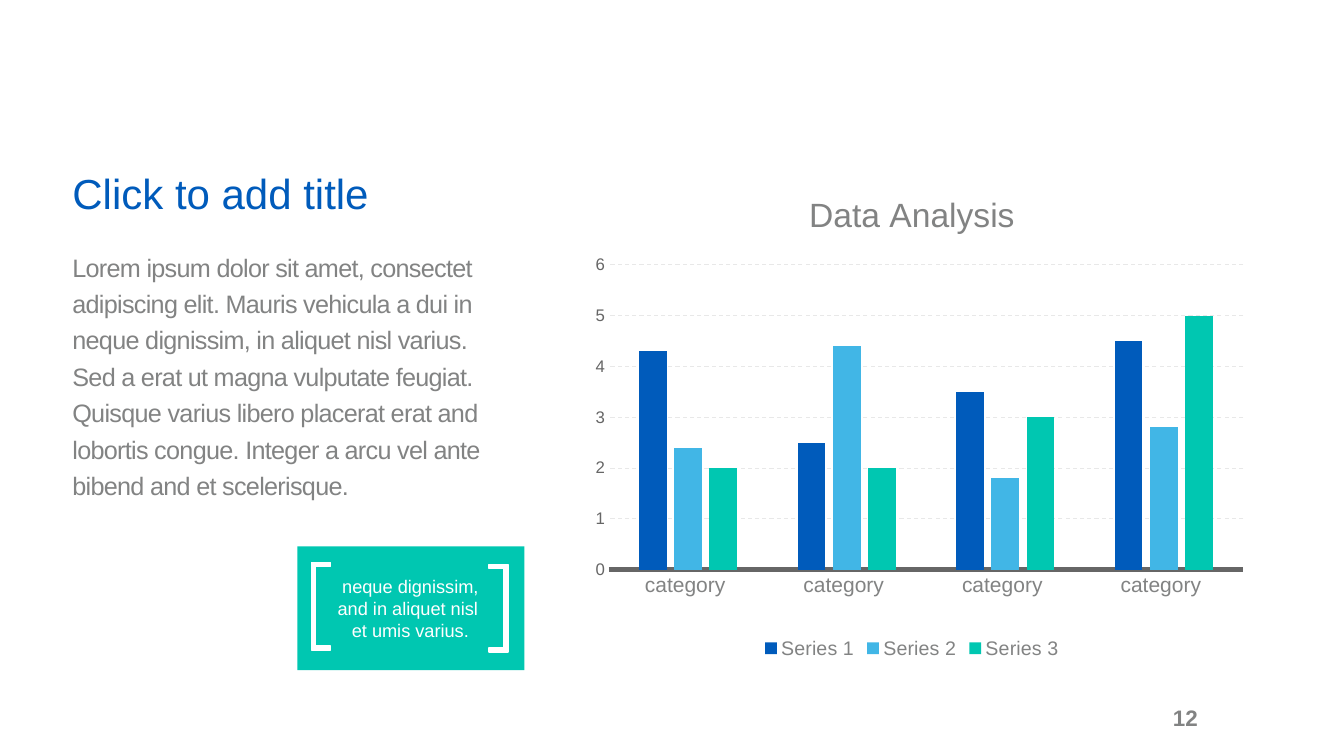
from lxml import etree
from pptx import Presentation
from pptx.chart.data import CategoryChartData
from pptx.dml.color import RGBColor
from pptx.enum.chart import XL_CHART_TYPE, XL_LEGEND_POSITION, XL_TICK_MARK
from pptx.enum.dml import MSO_LINE
from pptx.enum.shapes import MSO_SHAPE
from pptx.enum.text import MSO_ANCHOR, PP_ALIGN
from pptx.oxml.ns import qn
from pptx.util import Inches, Pt

TOP, MIDDLE, BOTTOM = MSO_ANCHOR.TOP, MSO_ANCHOR.MIDDLE, MSO_ANCHOR.BOTTOM
LEFT, CENTER, RIGHT = PP_ALIGN.LEFT, PP_ALIGN.CENTER, PP_ALIGN.RIGHT
NO_TICKS = XL_TICK_MARK.NONE

BLUE = RGBColor(0x00, 0x5B, 0xBB)
SKY = RGBColor(0x41, 0xB6, 0xE6)
TEAL = RGBColor(0x00, 0xC7, 0xB1)
GRAY = RGBColor(0x82, 0x83, 0x83)
DARK_GRAY = RGBColor(0x66, 0x66, 0x66)
PALE_GRAY = RGBColor(0xE8, 0xE8, 0xE8)
WHITE = RGBColor(0xFF, 0xFF, 0xFF)
FONT = "Arial"

TITLE = "Click to add title"
BODY = (
    "Lorem ipsum dolor sit amet, consectet adipiscing elit. Mauris vehicula "
    "a dui in neque dignissim, in aliquet nisl varius. Sed a erat ut magna "
    "vulputate feugiat. Quisque varius libero placerat erat and lobortis "
    "congue. Integer a arcu vel ante bibend and et scelerisque."
)
QUOTE = "neque dignissim, and in aliquet nisl \vet umis varius."
PAGE_NUMBER = "12"
CHART_TITLE = "Data Analysis"
CATEGORIES = ["category "] * 4
SERIES = [
    ("Series 1", (4.3, 2.5, 3.5, 4.5), BLUE),
    ("Series 2", (2.4, 4.4, 1.8, 2.8), SKY),
    ("Series 3", (2, 2, 3, 5), TEAL),
]

# Left, top, width and height in percent of the slide
TITLE_AREA = (4.65, 19.2, 35.03, 10.4)
BODY_AREA = (4.65, 31.87, 32.86, 40.4)
CALLOUT_AREA = (22.13, 72.27, 16.88, 16.4)
QUOTE_AREA = (24.08, 75.47, 12.9, 10.13)
LEFT_BRACKET = (23.18, 74.4, 1.43, 11.6)
RIGHT_BRACKET = (36.38, 74.67, 1.43, 11.6)
CHART_AREA = (41.63, 22.67, 52.44, 65.07)
PAGE_NUMBER_AREA = (84.17, 91.07, 5.93, 7.73)
# Shares of the chart's size
PLOT_AREA = {"x": 0.07, "y": 0.19, "w": 0.9, "h": 0.62}
BRACKET_THICKNESS = Inches(0.04)

deck = Presentation()
deck.slide_width, deck.slide_height = Inches(13.33), Inches(7.5)
slide = deck.slides.add_slide(deck.slide_layouts[6])


def place(area):
    """Turn percentages of the slide into lengths."""
    sides = (deck.slide_width, deck.slide_height) * 2
    return [round(share * side / 100) for share, side in zip(area, sides)]


def style_font(font, size, color, bold=False):
    font.name, font.size, font.bold = FONT, Pt(size), bold
    font.color.rgb = color


def add_text(text, area, size, color, bold=False, align=LEFT, anchor=TOP,
             line_spacing=None, tracking=None, insets=(0.1, 0.05)):
    frame = slide.shapes.add_textbox(*place(area)).text_frame
    frame.word_wrap = True
    frame.vertical_anchor = anchor
    frame.margin_left = frame.margin_right = Inches(insets[0])
    frame.margin_top = frame.margin_bottom = Inches(insets[1])
    paragraph = frame.paragraphs[0]
    paragraph.text = text
    paragraph.alignment = align
    paragraph.line_spacing = line_spacing
    for run in paragraph.runs:
        style_font(run.font, size, color, bold)
        if tracking:
            run.font._element.set("spc", str(round(tracking * 100)))


def add_bracket(area, opens_right):
    left, top, width, height = place(area)
    spine, tip, inward = (left, left + width, 1) if opens_right else (left + width, left, -1)
    inner = spine + inward * BRACKET_THICKNESS
    bottom = top + height
    upper, lower = top + BRACKET_THICKNESS, bottom - BRACKET_THICKNESS
    outline = slide.shapes.build_freeform(tip, top)
    outline.add_line_segments([
        (spine, top), (spine, bottom), (tip, bottom), (tip, lower),
        (inner, lower), (inner, upper), (tip, upper),
    ])
    bracket = outline.convert_to_shape()
    bracket.shadow.inherit = False
    bracket.fill.solid()
    bracket.fill.fore_color.rgb = WHITE
    bracket.line.color.rgb = WHITE
    bracket.line.width = Pt(1)


def set_plot_area(chart):
    """Fix the inner plot area inside the chart."""
    plot_area = chart._chartSpace.find(".//" + qn("c:plotArea"))
    for old in plot_area.findall(qn("c:layout")):
        plot_area.remove(old)
    layout = etree.Element(qn("c:layout"))
    manual = etree.SubElement(layout, qn("c:manualLayout"))
    settings = {"layoutTarget": "inner", "xMode": "edge", "yMode": "edge", **PLOT_AREA}
    for tag, value in settings.items():
        etree.SubElement(manual, qn("c:" + tag)).set("val", str(value))
    plot_area.insert(0, layout)


def add_analysis_chart():
    data = CategoryChartData()
    data.categories = CATEGORIES
    for name, values, _ in SERIES:
        data.add_series(name, values)
    chart = slide.shapes.add_chart(
        XL_CHART_TYPE.COLUMN_CLUSTERED, *place(CHART_AREA), data).chart
    style_font(chart.font, 10, DARK_GRAY)

    chart.has_title = True
    heading = chart.chart_title.text_frame
    heading.text = CHART_TITLE
    style_font(heading.paragraphs[0].runs[0].font, 24, GRAY)
    chart.chart_title.include_in_layout = False

    chart.has_legend = True
    chart.legend.position = XL_LEGEND_POSITION.BOTTOM
    chart.legend.include_in_layout = False
    style_font(chart.legend.font, 14, GRAY)

    columns = chart.plots[0]
    columns.gap_width, columns.overlap = 219, -27
    columns.vary_by_categories = False
    for series, (_, _, color) in zip(columns.series, SERIES):
        series.format.fill.solid()
        series.format.fill.fore_color.rgb = color

    categories, values = chart.category_axis, chart.value_axis
    for axis, size, color in ((categories, 15, GRAY), (values, 12, DARK_GRAY)):
        axis.major_tick_mark = axis.minor_tick_mark = NO_TICKS
        style_font(axis.tick_labels.font, size, color)
    categories.format.line.color.rgb = DARK_GRAY
    categories.format.line.width = Pt(3.25)
    values.minimum_scale, values.maximum_scale, values.major_unit = 0, 6, 1
    values.format.line.fill.background()
    grid = values.major_gridlines.format.line
    grid.color.rgb = PALE_GRAY
    grid.width = Pt(0.75)
    grid.dash_style = MSO_LINE.DASH
    set_plot_area(chart)


add_text(PAGE_NUMBER, PAGE_NUMBER_AREA, 16, GRAY, bold=True, align=RIGHT,
         anchor=MIDDLE, insets=(0.13, 0.07))
add_analysis_chart()
add_text(BODY, BODY_AREA, 18, GRAY, line_spacing=Pt(26), tracking=-0.5)
add_text(TITLE, TITLE_AREA, 30, BLUE, anchor=BOTTOM, line_spacing=0.9)

callout = slide.shapes.add_shape(MSO_SHAPE.RECTANGLE, *place(CALLOUT_AREA))
callout.shadow.inherit = False
callout.fill.solid()
callout.fill.fore_color.rgb = TEAL
callout.line.fill.background()
add_bracket(LEFT_BRACKET, opens_right=True)
add_bracket(RIGHT_BRACKET, opens_right=False)
add_text(QUOTE, QUOTE_AREA, 13, WHITE, align=CENTER)

deck.save("out.pptx")
